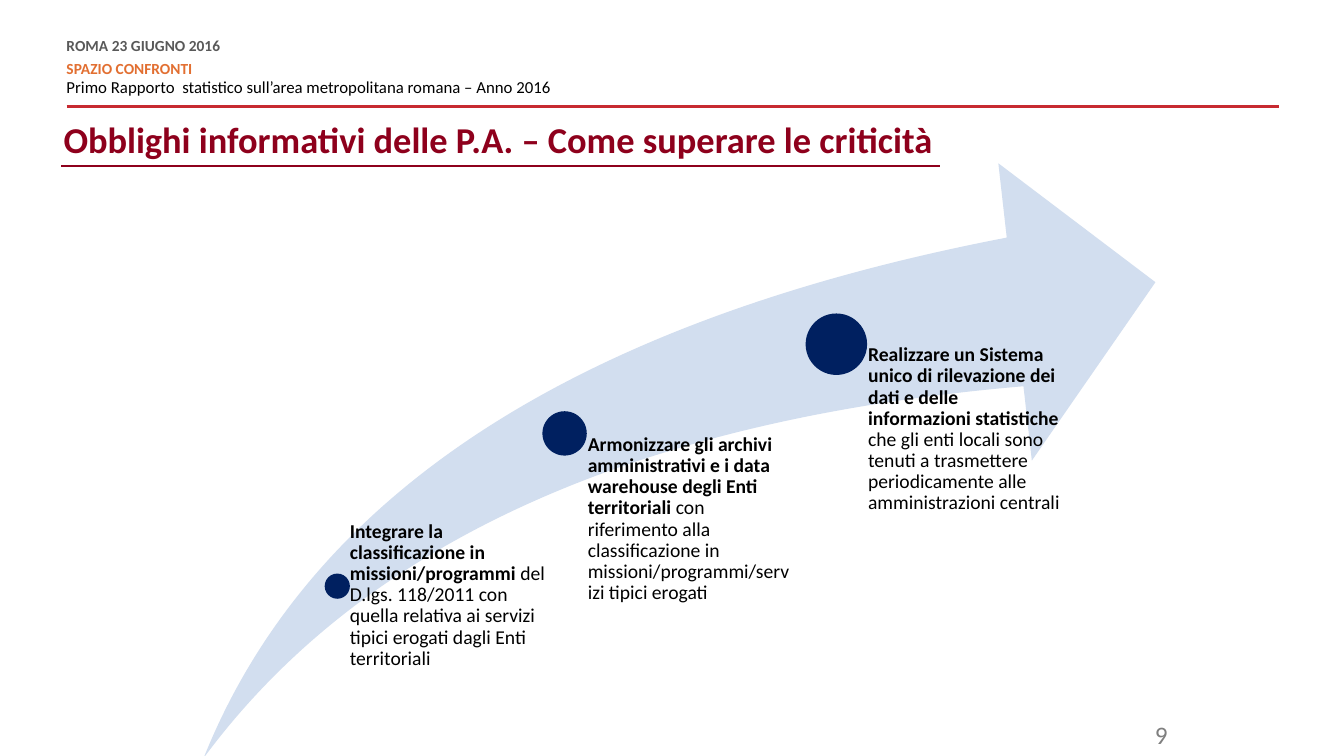
from lxml import etree
from pptx import Presentation
from pptx.dml.color import RGBColor
from pptx.enum.shapes import MSO_CONNECTOR, MSO_SHAPE
from pptx.enum.text import MSO_ANCHOR, MSO_AUTO_SIZE, PP_ALIGN
from pptx.oxml.ns import qn
from pptx.util import Pt

PX = 9144  # 100 px to the inch
FONT = "Calibri"
NAVY, MAROON, PALE_BLUE = "002060", "8E001C", "D2DEEF"
STRAIGHT = MSO_CONNECTOR.STRAIGHT
OVAL, SWOOSH = MSO_SHAPE.OVAL, MSO_SHAPE.SWOOSH_ARROW
TOP, NO_FIT = MSO_ANCHOR.TOP, MSO_AUTO_SIZE.NONE
LEFT, RIGHT = PP_ALIGN.LEFT, PP_ALIGN.RIGHT


def rgb(color):
    return RGBColor.from_string(color)


def style(paragraph, size, color, bold=None):
    font = paragraph.font
    font.name, font.size, font.bold = FONT, Pt(size), bold
    font.color.rgb = rgb(color)


prs = Presentation()
prs.slide_width, prs.slide_height = 1333 * PX, 750 * PX
slide = prs.slides.add_slide(prs.slide_layouts[5])
shapes = slide.shapes

# Title
title = shapes.title
title.left, title.top, title.width, title.height = (v * PX for v in (33, 111, 1234, 54))
heading = title.text_frame
heading.text = "Obblighi informativi delle P.A. – Come superare le criticità"
heading.auto_size, heading.vertical_anchor = NO_FIT, TOP
heading.margin_left = 30 * PX
heading.paragraphs[0].alignment = LEFT
style(heading.paragraphs[0], 26, MAROON, True)

# Event header
header = shapes.add_textbox(66 * PX, 39 * PX, 520 * PX, 59 * PX).text_frame
header.word_wrap = True
header.margin_left = header.margin_right = header.margin_top = header.margin_bottom = 0
header_lines = [
    ("ROMA 23 GIUGNO 2016", 11, "595959", True, 0, 6),
    ("SPAZIO CONFRONTI", 11, "E26F31", True, 0, 0),
    ("Primo Rapporto  statistico sull’area metropolitana romana – Anno 2016",
     12, "000000", False, 3, 6),
]
for i, (text, size, color, bold, before, after) in enumerate(header_lines):
    line = header.paragraphs[0] if i == 0 else header.add_paragraph()
    line.text = text
    line.line_spacing = Pt(10.8)
    line.space_before, line.space_after = Pt(before), Pt(after)
    style(line, size, color, bold)

# Rules under the header and the title
for left, right, y, color, weight in [
    (66, 1269, 106, "C72A31", 2),
    (61, 932, 165, MAROON, 1.5),
]:
    rule = shapes.add_connector(STRAIGHT, left * PX, y * PX, right * PX, y * PX)
    rule.line.color.rgb = rgb(color)
    rule.line.width = Pt(weight)
    etree.SubElement(rule._element.spPr, qn("a:effectLst"))

# Rising arrow
arrow = shapes.add_shape(SWOOSH, 202 * PX, 162 * PX, 944 * PX, 590 * PX)
arrow.adjustments[0] = arrow.adjustments[1] = 0.25
arrow.shadow.inherit = False
arrow.fill.solid()
arrow.fill.fore_color.rgb = rgb(PALE_BLUE)
arrow.line.fill.background()

# Steps: dot left, top, size; text top, width, height, inset; bold and plain wording
steps = [
    (322, 569, 25, 517, 220, 298, 13,
     "Integrare la classificazione in missioni/programmi ",
     "del D.lgs. 118/2011 con quella relativa ai servizi tipici erogati dagli Enti territoriali"),
    (538, 408, 44, 431, 226, 321, 23,
     "Armonizzare gli archivi amministrativi e i data warehouse degli Enti territoriali ",
     "con riferimento alla classificazione in missioni/programmi/servizi tipici erogati"),
    (799, 311, 61, 342, 226, 410, 32,
     "Realizzare un Sistema unico di rilevazione dei dati e delle informazioni statistiche ",
     "che gli enti locali sono tenuti a trasmettere periodicamente alle amministrazioni centrali"),
]
for left, top, size, text_top, width, height, inset, action, detail in steps:
    dot = shapes.add_shape(OVAL, left * PX, top * PX, size * PX, size * PX)
    dot.shadow.inherit = False
    dot.fill.solid()
    dot.fill.fore_color.rgb = rgb(NAVY)
    dot.line.fill.background()

    center = left + size // 2
    step = shapes.add_textbox(center * PX, text_top * PX, width * PX, height * PX).text_frame
    step.word_wrap = True
    step.margin_left = inset * PX
    step.margin_right = step.margin_top = step.margin_bottom = 0
    wording = step.paragraphs[0]
    wording.line_spacing = 0.9
    style(wording, 14, "000000")
    for text, bold in ((action, True), (detail, False)):
        run = wording.add_run()
        run.text, run.font.bold = text, bold

# Page number
page = shapes.add_textbox(1050 * PX, 709 * PX, 118 * PX, 35 * PX).text_frame
page.word_wrap = True
page.text = "9"
page.paragraphs[0].alignment = RIGHT
style(page.paragraphs[0], 18, "7F7F7F")

prs.save("out.pptx")
